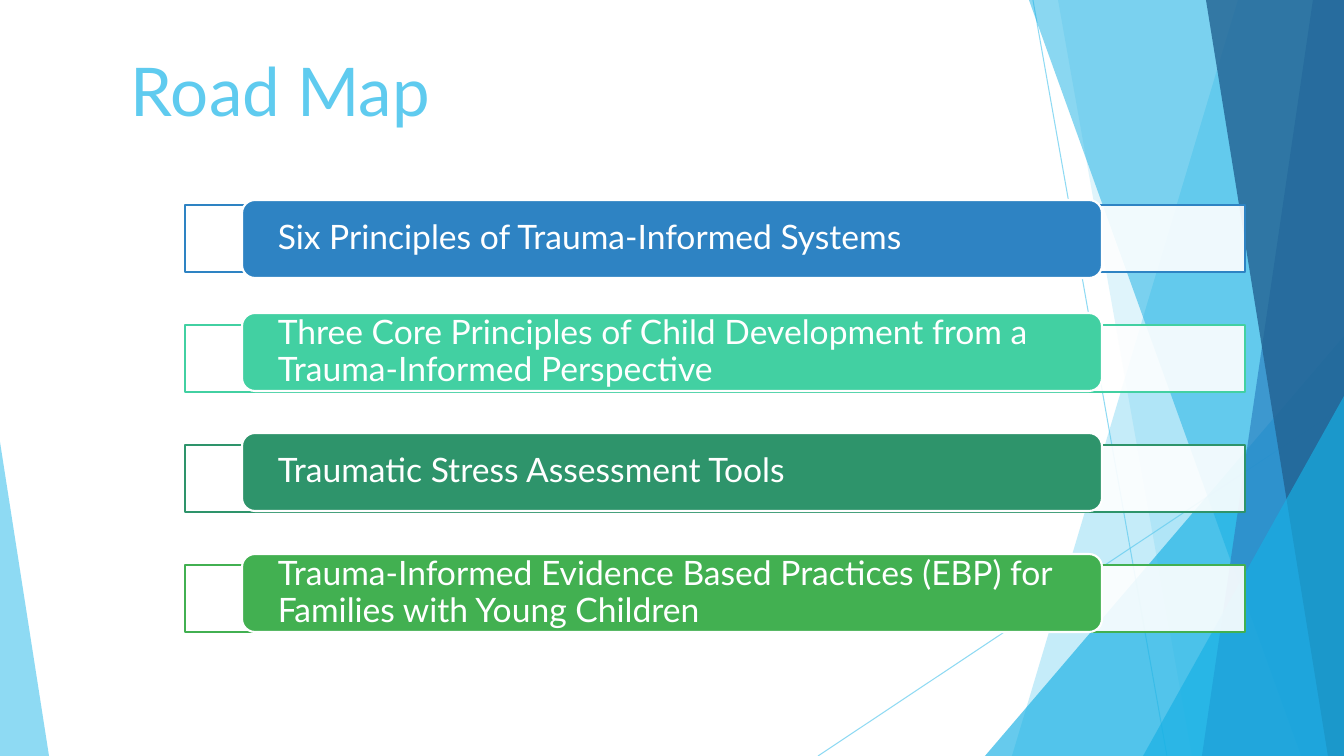
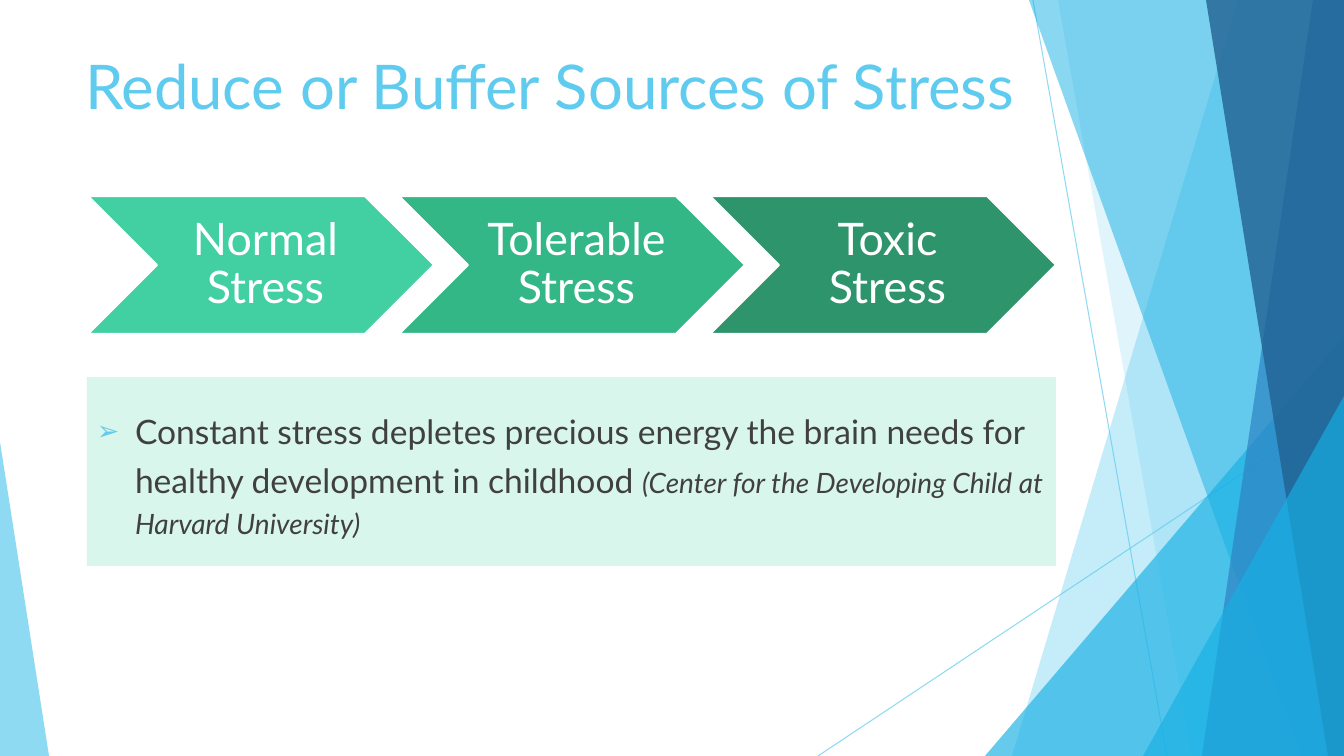
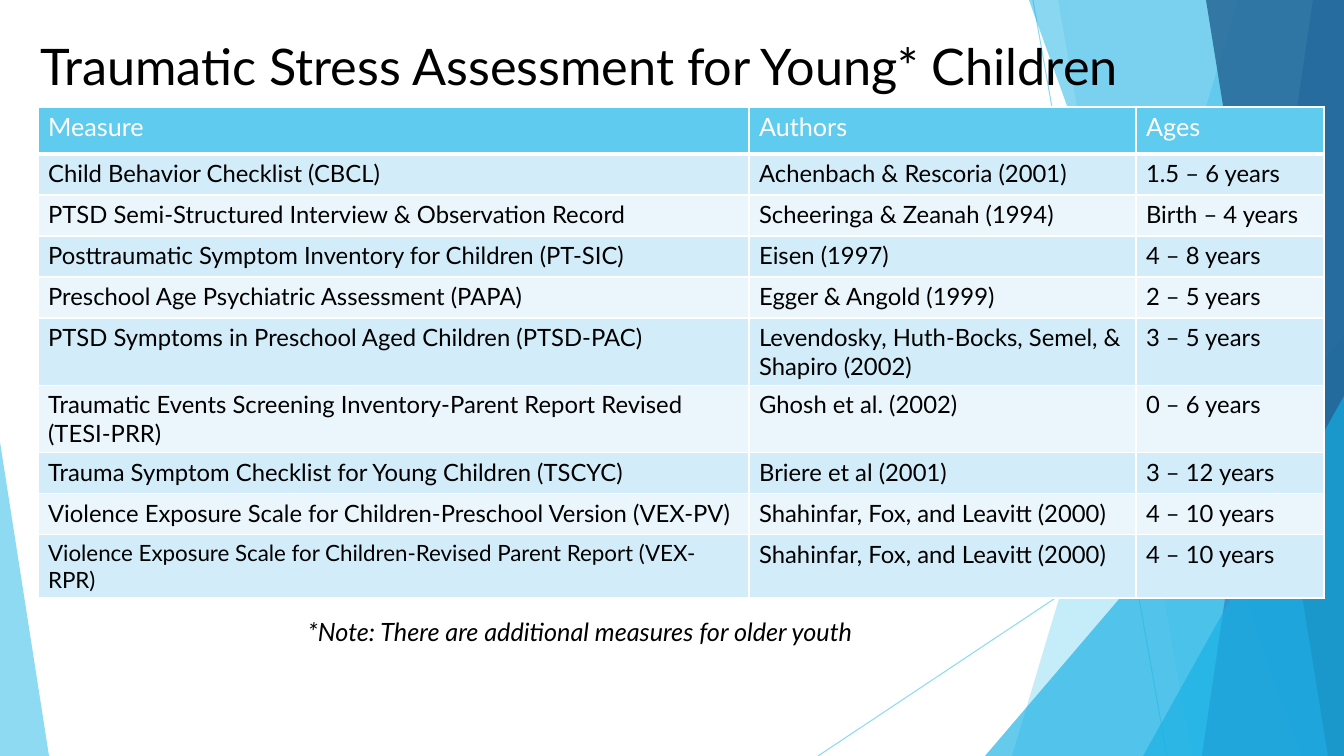
import pptx
import pptx.dml.color
import pptx.enum.shapes
import pptx.enum.text
import pptx.oxml
import pptx.oxml.ns
import pptx.util

SHAPE = pptx.enum.shapes.MSO_SHAPE
ANCHOR = pptx.enum.text.MSO_ANCHOR
ALIGN = pptx.enum.text.PP_ALIGN
qn = pptx.oxml.ns.qn

EMU_PER_PX = 914400 / 100.8
WIDTH, HEIGHT = 1344, 756
TITLE_ONLY, TITLE_AND_BODY = 5, 1
FONT = "Lato"

WHITE, BLACK, BODY_GREY = "FFFFFF", "000000", "404040"
SKY, CYAN, BLUE, NAVY = "5FCBEF", "17B0E4", "2E83C3", "226292"
MINT, JADE, PINE, GREEN = "42D0A2", "33B787", "2E946B", "42B051"
PALE_MINT, BAND_DARK, BAND_LIGHT = "D9F6EC", "D2ECF9", "EAF6FC"

ROAD_MAP = [
    ("Six Principles of Trauma-Informed Systems", BLUE, 200),
    ("Three Core Principles of Child Development from a Trauma-Informed Perspective", MINT, 313),
    ("Traumatic Stress Assessment Tools", PINE, 433),
    ("Trauma-Informed Evidence Based Practices (EBP) for Families with Young Children", GREEN, 554),
]
STRESS_LEVELS = [("Normal Stress", MINT), ("Tolerable Stress", JADE), ("Toxic Stress", PINE)]
MEASURES = [
    ("Measure", "Authors", "Ages"),
    ("Child Behavior Checklist (CBCL)", "Achenbach & Rescoria (2001)", "1.5 – 6 years"),
    ("PTSD Semi-Structured Interview & Observation Record", "Scheeringa & Zeanah (1994)",
     "Birth – 4 years"),
    ("Posttraumatic Symptom Inventory for Children (PT-SIC)", "Eisen (1997)", "4 – 8 years"),
    ("Preschool Age Psychiatric Assessment (PAPA)", "Egger & Angold (1999)", "2 – 5 years"),
    ("PTSD Symptoms in Preschool Aged Children (PTSD-PAC)",
     "Levendosky, Huth-Bocks, Semel, & Shapiro (2002)", "3 – 5 years"),
    ("Traumatic Events Screening Inventory-Parent Report Revised (TESI-PRR)",
     "Ghosh et al. (2002)", "0 – 6 years"),
    ("Trauma Symptom Checklist for Young Children (TSCYC)", "Briere et al (2001)", "3 – 12 years"),
    ("Violence Exposure Scale for Children-Preschool Version (VEX-PV)",
     "Shahinfar, Fox, and Leavitt (2000)", "4 – 10 years"),
    ("Violence Exposure Scale for Children-Revised Parent Report (VEX-RPR)",
     "Shahinfar, Fox, and Leavitt (2000)", "4 – 10 years"),
]


def px(*lengths):
    """Turn pixel lengths into a list of EMU."""
    return [pptx.util.Emu(round(length * EMU_PER_PX)) for length in lengths]


def rgb(hex_color):
    return pptx.dml.color.RGBColor.from_string(hex_color)


def set_opacity(properties, percent):
    """Make the solid fill directly under a spPr or ln element see-through."""
    color = properties.find(qn("a:solidFill"))[0]
    pptx.oxml.ns  # namespace helpers
    alpha = color.makeelement(qn("a:alpha"), {"val": str(percent * 1000)})
    color.append(alpha)


def paint(shape, fill, opacity=100, outline=None):
    shape.shadow.inherit = False
    shape.fill.solid()
    shape.fill.fore_color.rgb = rgb(fill)
    if opacity < 100:
        set_opacity(shape.element.spPr, opacity)
    if outline:
        shape.line.color.rgb = rgb(outline)
        shape.line.width = pptx.util.Pt(1.5)
    else:
        shape.line.fill.background()


def style(paragraph, size, color, align=ALIGN.LEFT, italic=False):
    paragraph.alignment = align
    font = paragraph.font
    font.name, font.size, font.bold, font.italic = FONT, pptx.util.Pt(size), False, italic
    font.color.rgb = rgb(color)


def set_frame(frame, anchor, insets=(10, 5, 10, 5)):
    frame.word_wrap = True
    frame.auto_size = pptx.enum.text.MSO_AUTO_SIZE.NONE
    frame.vertical_anchor = anchor
    (frame.margin_left, frame.margin_top,
     frame.margin_right, frame.margin_bottom) = px(*insets)


def place(shape, box):
    shape.left, shape.top, shape.width, shape.height = px(*box)


def add_label(shape, text, size, insets, align):
    """Write white, middle-anchored text inside a shape."""
    set_frame(shape.text_frame, ANCHOR.MIDDLE, insets)
    paragraph = shape.text_frame.paragraphs[0]
    paragraph.text = text
    paragraph.line_spacing = 0.9
    style(paragraph, size, WHITE, align)


def add_titled_slide(deck, layout, title, box, size, color=SKY):
    slide = deck.slides.add_slide(deck.slide_layouts[layout])
    heading = slide.shapes.title
    place(heading, box)
    set_frame(heading.text_frame, ANCHOR.TOP)
    heading.text_frame.text = title
    style(heading.text_frame.paragraphs[0], size, color)
    return slide


def draw_ray(shapes, start, end):
    ray = shapes.add_connector(pptx.enum.shapes.MSO_CONNECTOR.STRAIGHT, *px(*start, *end))
    ray.line.color.rgb = rgb(SKY)
    ray.line.width = pptx.util.Pt(0.75)
    properties = ray.element.spPr
    set_opacity(properties.find(qn("a:ln")), 70)
    properties.append(properties.makeelement(qn("a:effectLst"), {}))


def draw_shard(shapes, top_x, bottom_x, color, opacity):
    """Fill from a slanted left edge to the right side of the slide."""
    builder = shapes.build_freeform(*px(top_x, 0), scale=1.0)
    builder.add_line_segments(
        [px(WIDTH, 0), px(WIDTH, HEIGHT), px(bottom_x, HEIGHT)], close=True)
    paint(builder.convert_to_shape(), color, opacity)


def draw_corner(shapes, box, apex, color, opacity):
    corner = shapes.add_shape(SHAPE.ISOSCELES_TRIANGLE, *px(*box))
    corner.adjustments[0] = apex
    paint(corner, color, opacity)


def move_backdrop_to_master(deck, slide):
    """Draw the facets on a slide, then hand them to the master for all slides."""
    backdrop = slide.shapes.add_group_shape()
    facets = backdrop.shapes
    draw_ray(facets, (1033, 0), (1167, HEIGHT))
    draw_ray(facets, (WIDTH, 406), (818, HEIGHT))
    draw_shard(facets, 1238, 1012, SKY, 36)
    draw_shard(facets, 1058, 1192, SKY, 20)
    draw_corner(facets, (985, 336, 359, 420), 1, CYAN, 66)
    draw_shard(facets, 1029, 1301, CYAN, 50)
    draw_shard(facets, 1313, 1202, BLUE, 70)
    draw_shard(facets, 1206, 1328, NAVY, 80)
    draw_corner(facets, (1143, 396, 201, 360), 1, CYAN, 66)
    draw_corner(facets, (0, 442, 49, 314), 0, SKY, 70)
    for number, properties in enumerate(backdrop.element.iter(qn("p:cNvPr")), 100):
        properties.set("id", str(number))
    deck.slide_master.shapes.element.insert(2, backdrop.element)


def add_road_map(slide, box, pitch):
    left, top, width, height = box
    for row, (topic, color, bar_top) in enumerate(ROAD_MAP):
        frame = slide.shapes.add_shape(
            SHAPE.RECTANGLE, *px(left, top + row * pitch, width, height))
        paint(frame, WHITE, 90, color)
        bar = slide.shapes.add_shape(
            SHAPE.ROUNDED_RECTANGLE, *px(left + 57, bar_top, 860, 78))
        paint(bar, color, outline=WHITE)
        add_label(bar, topic, 24, (32, 0, 32, 0), ALIGN.LEFT)


def add_stress_chevrons(slide, box, pitch):
    left, top, width, height = box
    for step, (level, color) in enumerate(STRESS_LEVELS):
        chevron = slide.shapes.add_shape(
            SHAPE.CHEVRON, *px(left + step * pitch, top, width, height))
        paint(chevron, color, outline=WHITE)
        add_label(chevron, level, 32, (14, 5, 5, 5), ALIGN.CENTER)


def add_bullet(paragraph, mark, color, indent):
    properties = paragraph._p.get_or_add_pPr()
    hang = px(indent)[0]
    properties.set("marL", str(hang))
    properties.set("indent", str(-hang))
    namespace = pptx.oxml.ns.nsdecls("a")
    for markup in (f'<a:buClr {namespace}><a:srgbClr val="{color}"/></a:buClr>',
                   f'<a:buSzPct {namespace} val="80000"/>',
                   f'<a:buChar {namespace} char="{mark}"/>'):
        properties.append(pptx.oxml.parse_xml(markup))


def add_stress_finding(slide, box):
    finding = slide.placeholders[1]
    place(finding, box)
    finding.fill.solid()
    finding.fill.fore_color.rgb = rgb(PALE_MINT)
    set_frame(finding.text_frame, ANCHOR.MIDDLE)
    paragraph = finding.text_frame.paragraphs[0]
    add_bullet(paragraph, "➢", SKY, 38)
    paragraph.space_before = pptx.util.Pt(0)
    paragraph.line_spacing = 1.2
    style(paragraph, 24, BODY_GREY)
    paragraph.add_run().text = ("Constant stress depletes precious energy the brain needs "
                                "for healthy development in childhood ")
    citation = paragraph.add_run()
    citation.text = "(Center for the Developing Child at Harvard University)"
    citation.font.size = pptx.util.Pt(20)
    citation.font.italic = True


def set_borders(cell, bottom):
    """Rule a cell in white: 1 pt, with its own width in points at the bottom."""
    properties = cell._tc.get_or_add_tcPr()
    for place_in_order, (side, points) in enumerate(
            [("lnL", 1), ("lnR", 1), ("lnT", 1), ("lnB", bottom)]):
        properties.insert(place_in_order, pptx.oxml.parse_xml(
            f'<a:{side} {pptx.oxml.ns.nsdecls("a")} w="{points * 12700}">'
            f'<a:solidFill><a:srgbClr val="{WHITE}"/></a:solidFill></a:{side}>'))


def add_measures_table(slide, left, top, column_widths, header_height, row_height):
    last = len(MEASURES) - 1
    box = px(left, top, sum(column_widths), header_height + last * row_height)
    table = slide.shapes.add_table(len(MEASURES), len(column_widths), *box).table
    for column, width in zip(table.columns, px(*column_widths)):
        column.width = width
    for row, entries in enumerate(MEASURES):
        table.rows[row].height = px(row_height if row else header_height)[0]
        for column, entry in enumerate(entries):
            cell = table.cell(row, column)
            cell.text = entry
            cell.fill.solid()
            if row == 0:
                fill, size, color = SKY, 18, WHITE
            else:
                fill, size, color = (BAND_DARK if row % 2 else BAND_LIGHT), 17, BLACK
            if (row, column) == (last, 0):
                size = 16
            cell.fill.fore_color.rgb = rgb(fill)
            style(cell.text_frame.paragraphs[0], size, color)
            set_borders(cell, 1 if row else 3)


def add_note(slide, box, text):
    note = slide.shapes.add_textbox(*px(*box))
    set_frame(note.text_frame, ANCHOR.TOP)
    note.text_frame.text = text
    style(note.text_frame.paragraphs[0], 18, BLACK, italic=True)


def main():
    deck = pptx.Presentation()
    deck.slide_width, deck.slide_height = px(WIDTH, HEIGHT)

    road_map = add_titled_slide(deck, TITLE_ONLY, "Road Map", (121, 44, 916, 145), 48)
    move_backdrop_to_master(deck, road_map)
    add_road_map(road_map, (185, 205, 1060, 67), 120)

    stress = add_titled_slide(deck, TITLE_AND_BODY, "Reduce or Buffer Sources of Stress",
                              (75, 43, 1125, 169), 44)
    add_stress_finding(stress, (87, 377, 969, 189))
    add_stress_chevrons(stress, (88, 196, 346, 138), 311)

    assessment = add_titled_slide(deck, TITLE_ONLY,
                                  "Traumatic Stress Assessment for Young* Children",
                                  (30, 30, 1178, 90), 36, BLACK)
    add_measures_table(assessment, 38, 107, (711, 387, 188), 47, 41)
    add_note(assessment, (298, 611, 633, 40),
             "*Note: There are additional measures for older youth")

    deck.save("out.pptx")


if __name__ == "__main__":
    main()
